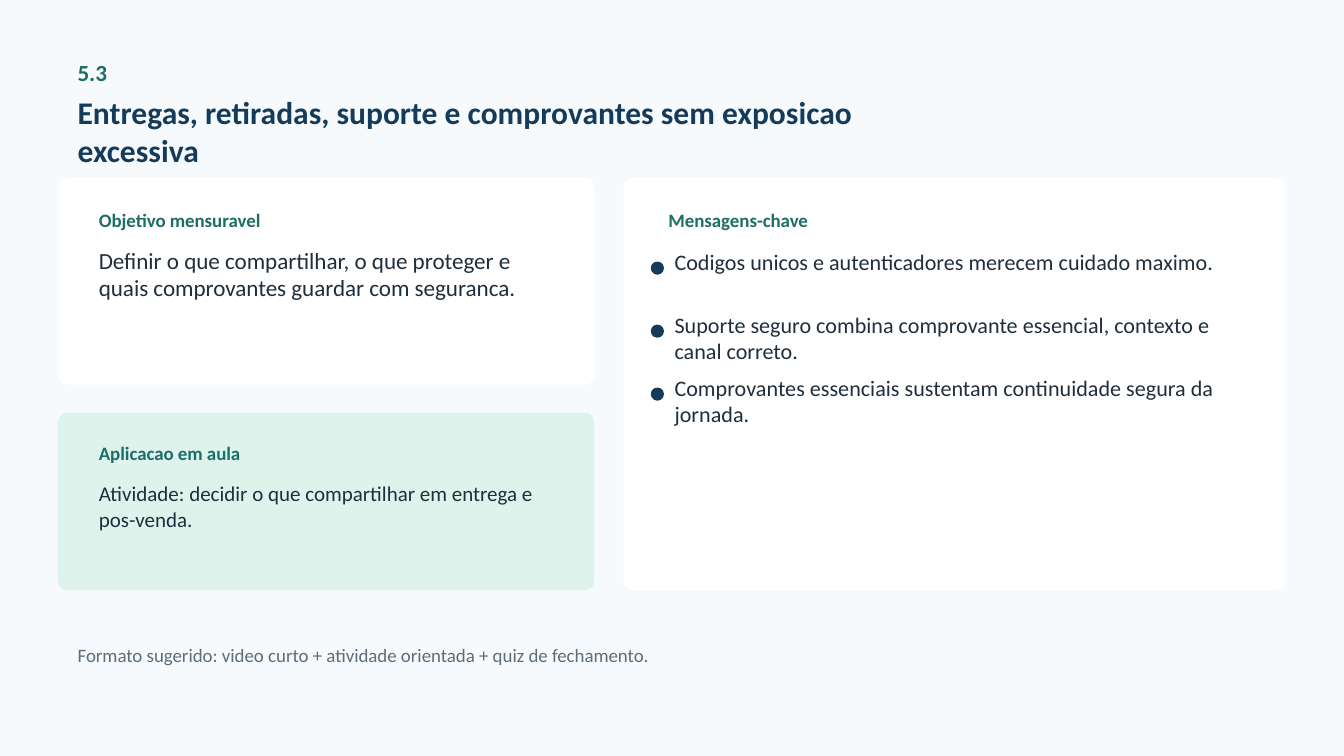
from pptx import Presentation
from pptx.dml.color import RGBColor
from pptx.enum.shapes import MSO_SHAPE
from pptx.enum.text import MSO_ANCHOR
from pptx.util import Inches, Pt

COLORS = {
    "background": "F7FAFC",
    "navy": "143C5A",
    "teal": "1D6E67",
    "ink": "1F2F3D",
    "muted": "5D6C78",
    "white": "FFFFFF",
    "mint": "DDF3EC",
}
MARGIN = 0.58
CARD_TEXT_LEFT = 0.79
CARD_RADIUS = 0.084
BULLET_TOP = 2.46
BULLET_STEP = 0.625
MESSAGES = [
    "Codigos unicos e autenticadores merecem cuidado maximo.",
    "Suporte seguro combina comprovante essencial, contexto e canal correto.",
    "Comprovantes essenciais sustentam continuidade segura da jornada.",
]


class LessonSlide:
    font_name = "Calibri"

    def __init__(self, presentation):
        self.slide = presentation.slides.add_slide(presentation.slide_layouts[6])
        fill = self.slide.background.fill
        fill.solid()
        fill.fore_color.rgb = self.color("background")

    def color(self, name):
        return RGBColor.from_string(COLORS[name])

    def shape(self, kind, left, top, width, height, color):
        shape = self.slide.shapes.add_shape(
            kind, Inches(left), Inches(top), Inches(width), Inches(height))
        shape.shadow.inherit = False
        shape.fill.solid()
        shape.fill.fore_color.rgb = self.color(color)
        shape.line.color.rgb = self.color(color)
        shape.line.width = Pt(0)
        return shape

    def card(self, left, top, width, height, color):
        card = self.shape(MSO_SHAPE.ROUNDED_RECTANGLE, left, top, width, height, color)
        card.adjustments[0] = CARD_RADIUS / min(width, height)

    def text(self, text, left, top, width, height, size, color="ink", bold=False,
             inset=(0.19, 0.15)):
        box = self.slide.shapes.add_textbox(
            Inches(left), Inches(top), Inches(width), Inches(height))
        frame = box.text_frame
        frame.word_wrap = True
        frame.vertical_anchor = MSO_ANCHOR.TOP
        frame.margin_left = frame.margin_right = Inches(inset[0])
        frame.margin_top = frame.margin_bottom = Inches(inset[1])
        run = frame.paragraphs[0].add_run()
        run.text = text
        run.font.name = self.font_name
        run.font.size = Pt(size)
        run.font.bold = bold
        run.font.color.rgb = self.color(color)

    def card_heading(self, text, left, top, width, height):
        self.text(text, left, top, width, height, 13.5, "teal", bold=True)

    def bullet(self, text, top):
        self.shape(MSO_SHAPE.OVAL, 6.46, top + 0.14, 0.12, 0.12, "navy")
        self.text(text, 6.69, top, 5.71, 0.54, 15.8, inset=(0, 0))


def main():
    presentation = Presentation()
    presentation.slide_width = Inches(13.33)
    presentation.slide_height = Inches(7.5)
    lesson = LessonSlide(presentation)

    lesson.text("5.3", MARGIN, 0.44, 0.94, 0.42, 16.5, "teal", bold=True)
    lesson.text("Entregas, retiradas, suporte e comprovantes sem exposicao excessiva",
                MARGIN, 0.77, 8.23, 0.88, 22.5, "navy", bold=True)

    lesson.card(MARGIN, 1.77, 5.31, 2.04, "white")
    lesson.card_heading("Objetivo mensuravel", CARD_TEXT_LEFT, 1.96, 2.29, 0.35)
    lesson.text("Definir o que compartilhar, o que proteger e quais comprovantes "
                "guardar com seguranca.", CARD_TEXT_LEFT, 2.29, 4.77, 1.25, 16.5)

    lesson.card(6.19, 1.77, 6.56, 4.08, "white")
    lesson.card_heading("Mensagens-chave", 6.44, 1.96, 2.5, 0.35)
    for index, message in enumerate(MESSAGES):
        lesson.bullet(message, BULLET_TOP + index * BULLET_STEP)

    lesson.card(MARGIN, 4.1, 5.31, 1.75, "mint")
    lesson.card_heading("Aplicacao em aula", CARD_TEXT_LEFT, 4.27, 2.08, 0.31)
    lesson.text("Atividade: decidir o que compartilhar em entrega e pos-venda.",
                CARD_TEXT_LEFT, 4.62, 4.77, 0.98, 15)

    lesson.text("Formato sugerido: video curto + atividade orientada + quiz de fechamento.",
                MARGIN, 6.27, 12.29, 0.44, 13.5, "muted")

    presentation.save("out.pptx")


if __name__ == "__main__":
    main()
